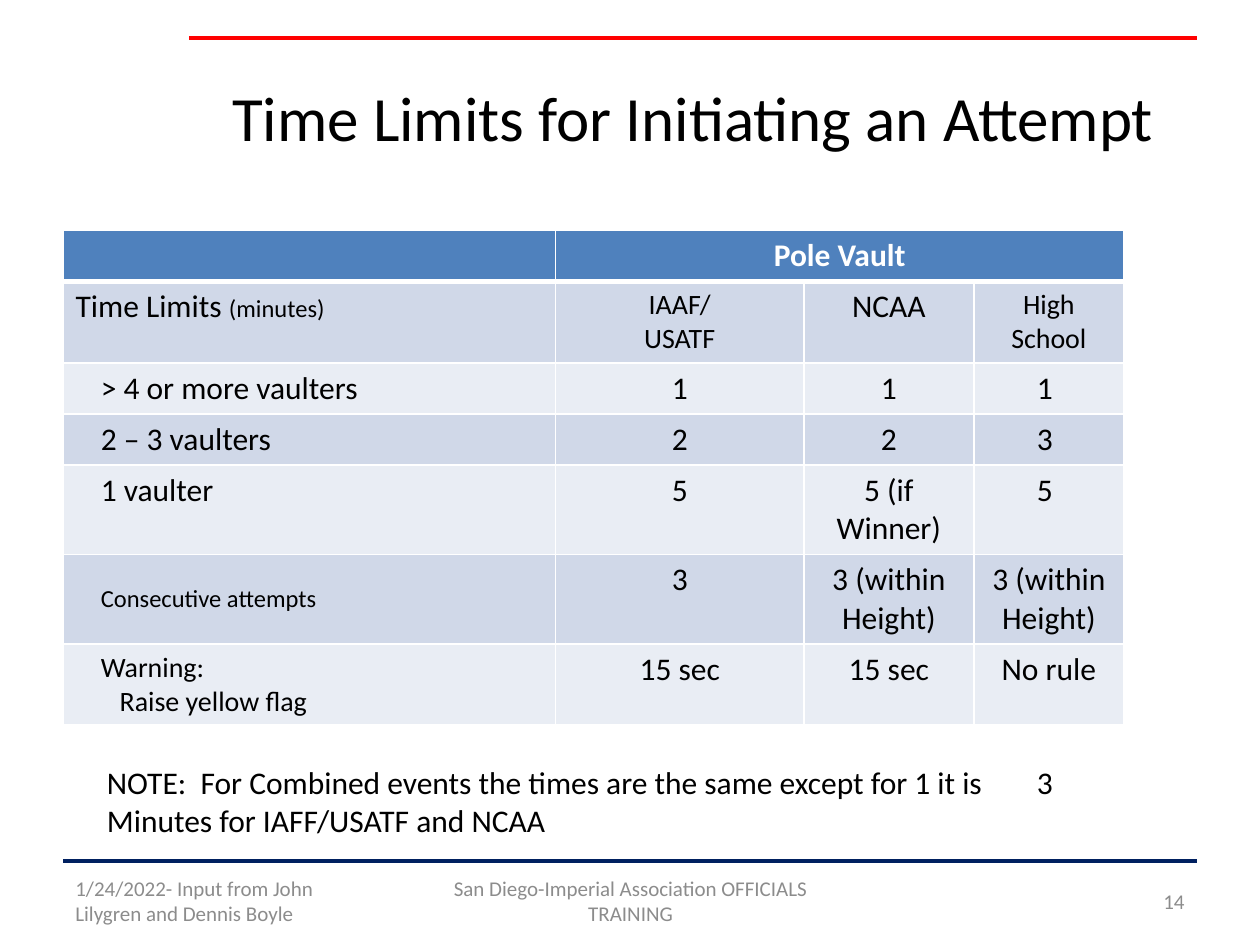
from dataclasses import dataclass

from lxml.etree import SubElement
from pptx import Presentation
from pptx.dml.color import RGBColor
from pptx.enum.shapes import MSO_CONNECTOR
from pptx.enum.text import MSO_ANCHOR, PP_ALIGN
from pptx.oxml import parse_xml
from pptx.oxml.ns import nsdecls, qn
from pptx.util import Inches, Pt

BLACK = RGBColor(0x00, 0x00, 0x00)
WHITE = RGBColor(0xFF, 0xFF, 0xFF)
GRAY = RGBColor(0x8C, 0x8C, 0x8C)
RED = RGBColor(0xFF, 0x00, 0x00)
NAVY = RGBColor(0x00, 0x20, 0x60)
HEADER_BLUE = RGBColor(0x4F, 0x81, 0xBD)
BANDS = (RGBColor(0xD0, 0xD8, 0xE8), RGBColor(0xE9, 0xED, 0xF4))

FONT = "Calibri"
LEFT, CENTER, RIGHT = PP_ALIGN.LEFT, PP_ALIGN.CENTER, PP_ALIGN.RIGHT
TOP, MIDDLE = MSO_ANCHOR.TOP, MSO_ANCHOR.MIDDLE


@dataclass
class Rule:
    left: float
    right: float
    y: float
    color: RGBColor


@dataclass
class Label:
    text: str
    box: tuple[float, float, float, float]
    size: int
    color: RGBColor
    align: PP_ALIGN = LEFT
    anchor: MSO_ANCHOR = MIDDLE
    tab: float = 0


@dataclass
class Entry:
    text: str
    size: int = 18
    align: PP_ALIGN = CENTER
    anchor: MSO_ANCHOR = TOP
    indents: tuple[float, ...] = (0, 0)


def row_head(text: str, size: int = 18, anchor: MSO_ANCHOR = TOP,
             indents: tuple[float, ...] = (0.2, 0.35)) -> Entry:
    return Entry(text, size, LEFT, anchor, indents)


def school_count(text: str) -> Entry:
    return Entry(text, align=LEFT, indents=(0.4,))


RULES = [Rule(1.5, 9.5, 0.3, RED), Rule(0.5, 9.5, 6.83, NAVY)]

LABELS = [
    Label("Time Limits for Initiating an Attempt", (1.5, 0.3, 8, 1.25), 36, BLACK, CENTER),
    Label("San Diego-Imperial Association OFFICIALS TRAINING",
          (3.42, 6.95, 3.17, 0.4), 12, GRAY, CENTER),
    Label("14", (7.17, 6.95, 2.33, 0.4), 12, GRAY, RIGHT),
    Label("1/24/2022- Input from John Lilygren and Dennis Boyle",
          (0.5, 6.95, 2.33, 0.4), 12, GRAY),
    Label("NOTE:  For Combined events the times are the same except for 1 it is\t"
          "3 Minutes for IAFF/USATF and NCAA",
          (0.75, 6.01, 7.75, 0.71), 18, BLACK, anchor=TOP, tab=7.38),
]

COLUMN_WIDTHS = (3.91, 1.97, 1.35, 1.19)
ROW_HEIGHTS = (0.4, 0.64, 0.4, 0.4, 0.71, 0.71, 0.64)
TIME_LIMITS = [
    [Entry(""), Entry("Pole Vault"), Entry(""), Entry("")],
    [row_head("Time Limits ", indents=(0,)), Entry("IAAF/\nUSATF", 16, anchor=MIDDLE),
     Entry("NCAA"), Entry("High School", 16, anchor=MIDDLE)],
    [row_head("> 4 or more vaulters"), Entry("1"), Entry("1"), school_count("1")],
    [row_head("2 – 3 vaulters"), Entry("2"), Entry("2"), school_count("3")],
    [row_head("1 vaulter"), Entry("5"), Entry("5 (if Winner)"), school_count("5")],
    [row_head("Consecutive attempts", 14, MIDDLE), Entry("3"),
     Entry("3 (within Height)"), Entry("3 (within Height)")],
    [row_head("Warning:\nRaise yellow flag", 16, MIDDLE), Entry("15 sec"),
     Entry("15 sec"), Entry("No rule")],
]


def format_font(font, size: int, color: RGBColor, bold: bool = False) -> None:
    font.name = FONT
    font.size = Pt(size)
    font.bold = bold
    font.color.rgb = color


def draw_rule(slide, rule: Rule) -> None:
    connector = slide.shapes.add_connector(
        MSO_CONNECTOR.STRAIGHT, Inches(rule.left), Inches(rule.y),
        Inches(rule.right), Inches(rule.y))
    connector.line.color.rgb = rule.color
    connector.line.width = Pt(2.25)
    SubElement(connector._element.spPr, qn("a:effectLst"))


def draw_label(slide, label: Label) -> None:
    shape = slide.shapes.add_textbox(*map(Inches, label.box))
    text_frame = shape.text_frame
    text_frame.word_wrap = True
    text_frame.vertical_anchor = label.anchor
    text_frame.text = label.text
    paragraph = text_frame.paragraphs[0]
    paragraph.alignment = label.align
    if label.tab:
        tabs = SubElement(paragraph._p.get_or_add_pPr(), qn("a:tabLst"))
        SubElement(tabs, qn("a:tab"), pos=str(Inches(label.tab)), algn="l")
    for run in paragraph.runs:
        format_font(run.font, label.size, label.color)


def set_borders(cell, top: float, bottom: float) -> None:
    properties = cell._tc.get_or_add_tcPr()
    for index, (side, width) in enumerate(
            (("L", 1), ("R", 1), ("T", top), ("B", bottom))):
        properties.insert(index, parse_xml(
            f'<a:ln{side} {nsdecls("a")} w="{Pt(width)}"><a:solidFill>'
            f'<a:srgbClr val="{WHITE}"/></a:solidFill></a:ln{side}>'))


def fill_cell(cell, entry: Entry, row: int) -> None:
    header = row == 0
    set_borders(cell, top=3 if row == 1 else 1, bottom=3 if header else 1)
    cell.fill.solid()
    cell.fill.fore_color.rgb = HEADER_BLUE if header else BANDS[(row - 1) % 2]
    cell.vertical_anchor = entry.anchor
    cell.text_frame.text = entry.text
    for paragraph, indent in zip(cell.text_frame.paragraphs, entry.indents):
        paragraph.alignment = entry.align
        properties = paragraph._p.get_or_add_pPr()
        properties.set("marL", str(Inches(indent)))
        properties.set("indent", "0")
        for run in paragraph.runs:
            format_font(run.font, entry.size, WHITE if header else BLACK, header)


def draw_time_limits(slide) -> None:
    table = slide.shapes.add_table(
        len(ROW_HEIGHTS), len(COLUMN_WIDTHS), Inches(0.5), Inches(1.83),
        Inches(sum(COLUMN_WIDTHS)), Inches(sum(ROW_HEIGHTS))).table
    for column, width in zip(table.columns, COLUMN_WIDTHS):
        column.width = Inches(width)
    for row, height in zip(table.rows, ROW_HEIGHTS):
        row.height = Inches(height)
    for row, entries in enumerate(TIME_LIMITS):
        for column, entry in enumerate(entries):
            fill_cell(table.cell(row, column), entry, row)
    table.cell(0, 1).merge(table.cell(0, 3))

    # Smaller unit after the first row heading
    unit = table.cell(1, 0).text_frame.paragraphs[0].add_run()
    unit.text = "(minutes)"
    format_font(unit.font, 14, BLACK)


def main() -> None:
    presentation = Presentation()
    presentation.slide_width = Inches(10)
    presentation.slide_height = Inches(7.5)
    slide = presentation.slides.add_slide(presentation.slide_layouts[6])

    # Rules above the title and above the footer
    for rule in RULES:
        draw_rule(slide, rule)

    # Table of time limits
    draw_time_limits(slide)

    # Title, footer and note
    for label in LABELS:
        draw_label(slide, label)

    presentation.save("out.pptx")


if __name__ == "__main__":
    main()
